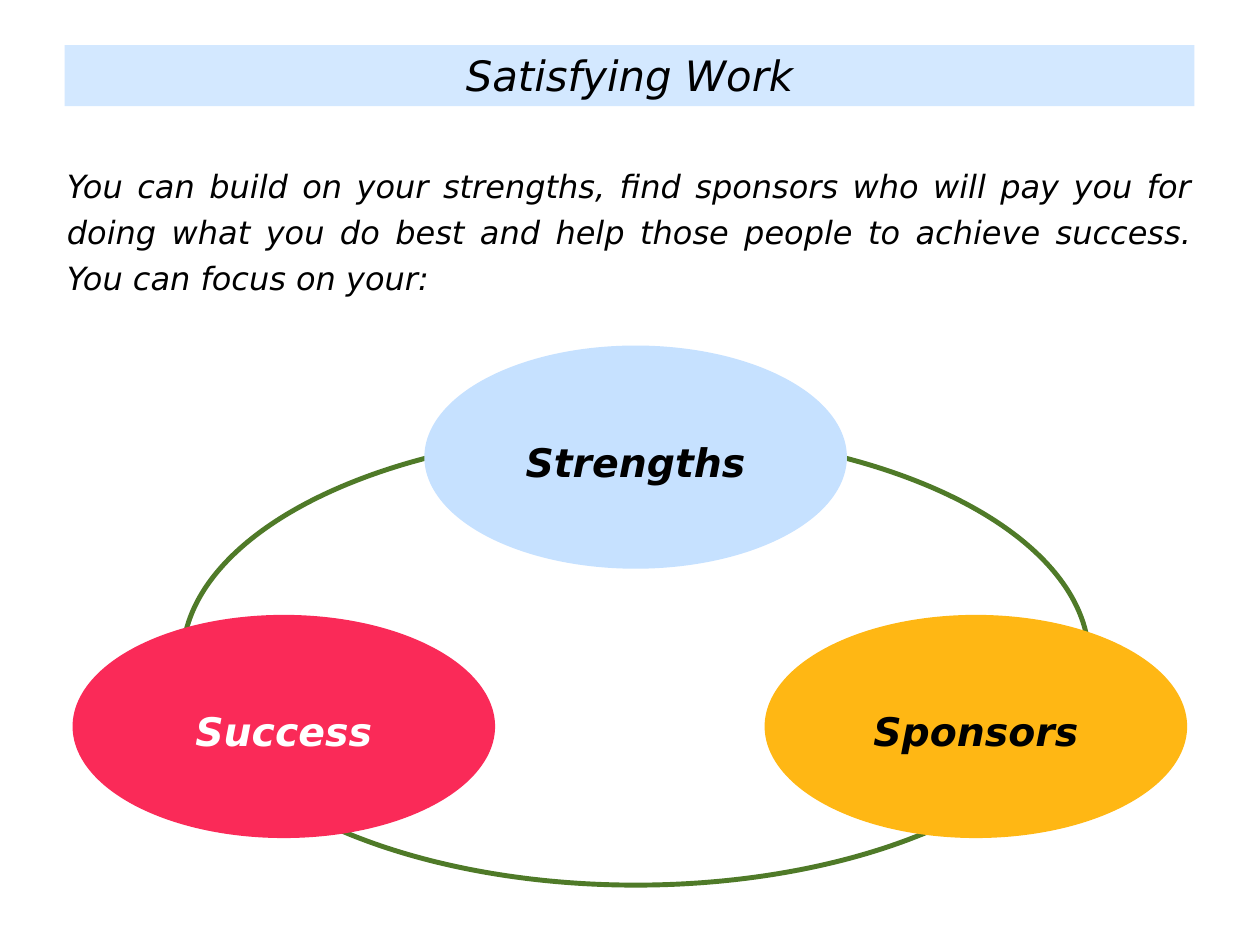
from dataclasses import dataclass

import pptx
import pptx.dml.color
import pptx.enum.shapes
import pptx.enum.text
import pptx.util

Pt = pptx.util.Pt
Align = pptx.enum.text.PP_ALIGN
Anchor = pptx.enum.text.MSO_ANCHOR


@dataclass(frozen=True)
class Theme:
    font: str = "DejaVu Sans"
    title_size: float = 34
    body_size: float = 26
    label_size: float = 32
    black: str = "000000"
    white: str = "FFFFFF"
    banner: str = "D3E8FF"
    ring: str = "4F7A28"
    strengths: str = "C6E1FF"
    sponsors: str = "FFB714"
    success: str = "FA2A58"


@dataclass(frozen=True)
class Box:
    left: float
    top: float
    width: float
    height: float

    def lengths(self) -> tuple:
        return Pt(self.left), Pt(self.top), Pt(self.width), Pt(self.height)


@dataclass(frozen=True)
class Focus:
    label: str
    left: float
    top: float
    fill: str
    text_color: str


THEME = Theme()
SLIDE_WIDTH, SLIDE_HEIGHT = 1024, 768
FOCUS_WIDTH, FOCUS_HEIGHT = 343.4, 181.4
UPPER_ROW, LOWER_ROW = 280.8, 499.7

TITLE_BOX = Box(52.6, 36.7, 918, 49.6)
INTRO_BOX = Box(50.4, 125.3, 923, 113.8)
RING_BOX = Box(148.4, 351.4, 736.6, 367.9)

INTRO = (
    "You can build on your strengths, find sponsors who will pay you for "
    "doing what you do best and help those people to achieve success. "
    "You can focus on your:"
)
FOCUSES = (
    Focus("Sponsors", 621.4, LOWER_ROW, THEME.sponsors, THEME.black),
    Focus("Strengths", 344.9, UPPER_ROW, THEME.strengths, THEME.black),
    Focus("Success", 59, LOWER_ROW, THEME.success, THEME.white),
)


def rgb(color: str) -> pptx.dml.color.RGBColor:
    return pptx.dml.color.RGBColor.from_string(color)


def set_text(shape, text: str, size: float, color: str, alignment: Align,
             anchor: Anchor, inset: float, spacing: float = 1.0,
             bold: bool = False) -> None:
    text_frame = shape.text_frame
    text_frame.text = text
    text_frame.word_wrap = True
    text_frame.auto_size = pptx.enum.text.MSO_AUTO_SIZE.NONE
    text_frame.vertical_anchor = anchor
    text_frame.margin_left = text_frame.margin_right = Pt(inset)
    text_frame.margin_top = text_frame.margin_bottom = Pt(inset)
    paragraph = text_frame.paragraphs[0]
    paragraph.alignment = alignment
    paragraph.line_spacing = spacing
    for run in paragraph.runs:
        run.font.name = THEME.font
        run.font.size = Pt(size)
        run.font.bold = bold
        run.font.italic = True
        run.font.color.rgb = rgb(color)


def add_title(slide) -> None:
    title = slide.shapes.title
    title.left, title.top, title.width, title.height = TITLE_BOX.lengths()
    title.fill.solid()
    title.fill.fore_color.rgb = rgb(THEME.banner)
    set_text(title, "Satisfying Work", THEME.title_size, THEME.black,
             Align.CENTER, Anchor.TOP, inset=4)


def add_intro(slide) -> None:
    intro = slide.shapes.add_textbox(*INTRO_BOX.lengths())
    set_text(intro, INTRO, THEME.body_size, THEME.black,
             Align.JUSTIFY, Anchor.TOP, inset=4, spacing=1.2)


def add_ellipse(slide, box: Box, fill: str):
    ellipse = slide.shapes.add_shape(
        pptx.enum.shapes.MSO_SHAPE.OVAL, *box.lengths())
    ellipse.shadow.inherit = False
    ellipse.fill.solid()
    ellipse.fill.fore_color.rgb = rgb(fill)
    ellipse.line.fill.background()
    return ellipse


def add_ring(slide) -> None:
    ring = add_ellipse(slide, RING_BOX, THEME.white)
    ring.line.color.rgb = rgb(THEME.ring)
    ring.line.width = Pt(4)


def add_focus(slide, focus: Focus) -> None:
    box = Box(focus.left, focus.top, FOCUS_WIDTH, FOCUS_HEIGHT)
    ellipse = add_ellipse(slide, box, focus.fill)
    set_text(ellipse, focus.label, THEME.label_size, focus.text_color,
             Align.CENTER, Anchor.MIDDLE, inset=6, spacing=1.2, bold=True)


def main() -> None:
    presentation = pptx.Presentation()
    presentation.slide_width = Pt(SLIDE_WIDTH)
    presentation.slide_height = Pt(SLIDE_HEIGHT)
    slide = presentation.slides.add_slide(
        presentation.slide_layouts.get_by_name("Title Only"))

    # Heading and introduction
    add_title(slide)
    add_intro(slide)

    # Ring behind the three focus areas
    add_ring(slide)
    for focus in FOCUSES:
        add_focus(slide, focus)

    presentation.save("out.pptx")


if __name__ == "__main__":
    main()
